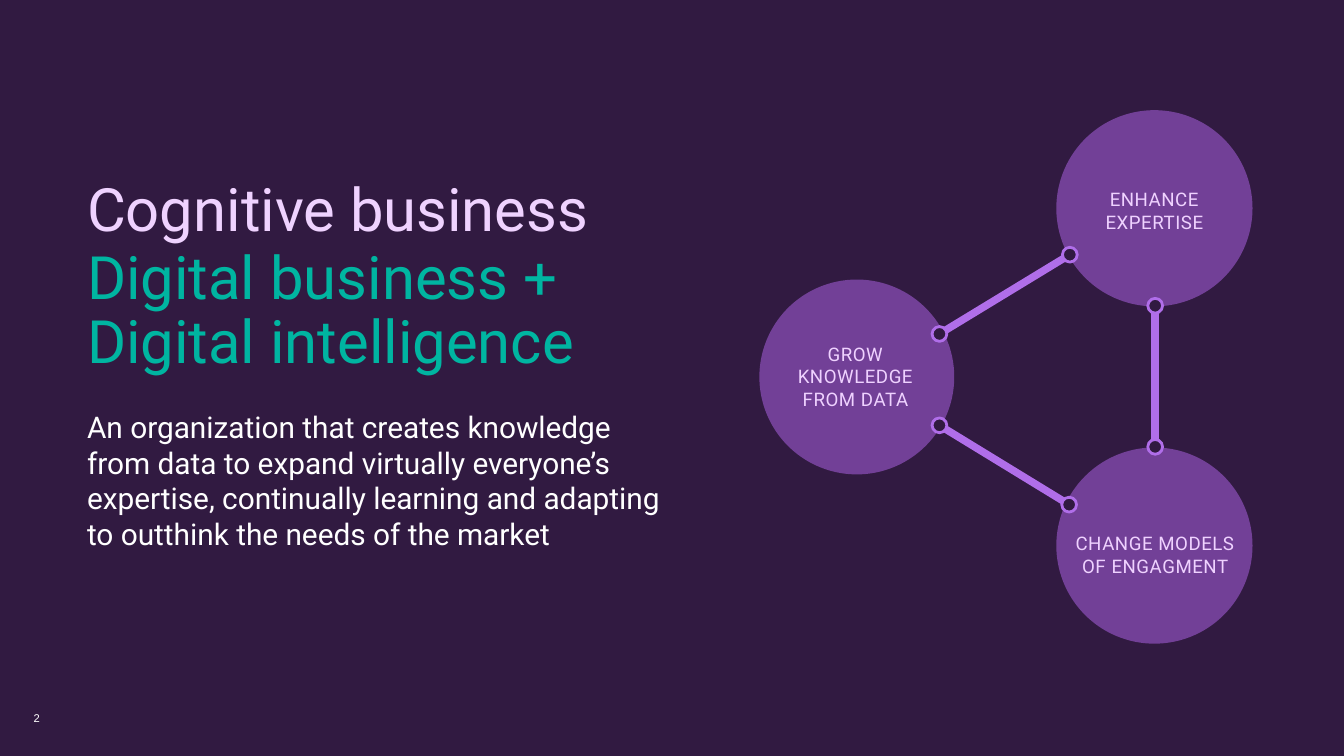
from lxml import etree
from pptx import Presentation
from pptx import util as u
from pptx.dml.color import RGBColor
from pptx.enum import shapes, text
from pptx.oxml.ns import qn

NIGHT = RGBColor(0x31, 0x1A, 0x41)
PURPLE = RGBColor(0x72, 0x40, 0x97)
VIOLET = RGBColor(0xB0, 0x6E, 0xE9)
LILAC = RGBColor(0xEF, 0xD2, 0xFF)
TEAL = RGBColor(0x00, 0xB5, 0xA1)
WHITE = RGBColor(0xFF, 0xFF, 0xFF)

COLUMNS, ROWS = 100, 56.25
DOT = 1.1

CIRCLES = [(78.6, 33.3, 14.6), (56.5, 20.8, 14.5), (78.6, 8.2, 14.6)]
LINKS = [
    ((79.6, 18.95), (69.9, 24.85), 0),
    ((79.55, 37.55), (69.9, 31.65), 0),
    ((85.95, 22.75), (85.95, 33.25), 0.4),
]
LABELS = [
    ("GROW\vKNOWLEDGE\vFROM DATA", (56.4, 25, 14.5, 6.1)),
    ("ENHANCE EXPERTISE", (78.6, 13.5, 14.6, 4.4)),
    ("CHANGE MODELS OF ENGAGMENT", (78.7, 39.1, 14.5, 6.1)),
]


def write(frame, words, size, color, font="Roboto", align=None, line_spacing=None, tracking=None):
    paragraph = frame.paragraphs[0]
    paragraph.text = words
    paragraph.alignment = align
    paragraph.line_spacing = line_spacing
    for run in paragraph.runs:
        run.font.name = font
        run.font.size = u.Pt(size)
        run.font.color.rgb = color
        if tracking:
            run.font._element.set("spc", str(round(tracking * 100)))


class Deck:
    """Draws the elements of a slide on a grid of columns and rows."""

    def __init__(self):
        self.presentation = Presentation()
        self.presentation.slide_width = u.Inches(10)
        self.presentation.slide_height = self.presentation.slide_width * 9 // 16
        self.column = self.presentation.slide_width / COLUMNS
        self.row = self.presentation.slide_height / ROWS
        self.slide = self.presentation.slides.add_slide(self.presentation.slide_layouts[6])
        self.slide.background.fill.solid()
        self.slide.background.fill.fore_color.rgb = NIGHT

    def place(self, *lengths):
        return [round(length * unit) for length, unit in zip(lengths, [self.column, self.row] * 2)]

    def text(self, words, box, size, color, anchor=text.MSO_ANCHOR.TOP, margin=None, **style):
        frame = self.slide.shapes.add_textbox(*self.place(*box)).text_frame
        frame.word_wrap = True
        frame.vertical_anchor = anchor
        if margin is not None:
            frame.margin_left = frame.margin_right = margin
            frame.margin_top = frame.margin_bottom = margin
        write(frame, words, size, color, **style)

    def circle(self, left, top, size, fill, line=None):
        shape = self.slide.shapes.add_shape(
            shapes.MSO_SHAPE.OVAL, *self.place(left, top, size, size))
        shape.shadow.inherit = False
        shape.fill.solid()
        shape.fill.fore_color.rgb = fill
        if line is None:
            shape.line.fill.background()
        else:
            shape.line.color.rgb = line
            shape.line.width = u.Pt(1.5)

    def link(self, start, end, overshoot):
        ends = self.place(start[0], start[1] - overshoot, end[0], end[1] + overshoot)
        connector = self.slide.shapes.add_connector(shapes.MSO_CONNECTOR.STRAIGHT, *ends)
        connector.line.color.rgb = VIOLET
        connector.line.width = u.Pt(4)
        etree.SubElement(connector._element.spPr, qn("a:effectLst"))
        for x, y in (end, start):
            self.circle(x - DOT / 2, y - DOT / 2, DOT, NIGHT, line=VIOLET)


def main():
    deck = Deck()
    deck.text(
        "An organization that creates knowledge from data to expand virtually everyone’s "
        "expertise, continually learning and adapting to outthink the needs of the market",
        (5.5, 29.9, 45.7, 12.1), 16, WHITE)
    deck.text("Digital business +\vDigital intelligence", (5.5, 18, 41.4, 12.6), 32, TEAL,
              line_spacing=u.Pt(34))
    deck.text("Cognitive business", (5.5, 12.7, 42.6, 6.1), 32, LILAC, line_spacing=0.95)
    deck.text("2", (2.5, 51.7, 2.3, 2.2), 6, WHITE, font="Arial",
              anchor=text.MSO_ANCHOR.BOTTOM, margin=0)
    for left, top, size in CIRCLES:
        deck.circle(left, top, size, PURPLE)
    for start, end, overshoot in LINKS:
        deck.link(start, end, overshoot)
    for words, box in LABELS:
        deck.text(words, box, 10, LILAC, align=text.PP_ALIGN.CENTER, tracking=0.3)
    deck.presentation.save("out.pptx")


if __name__ == "__main__":
    main()
